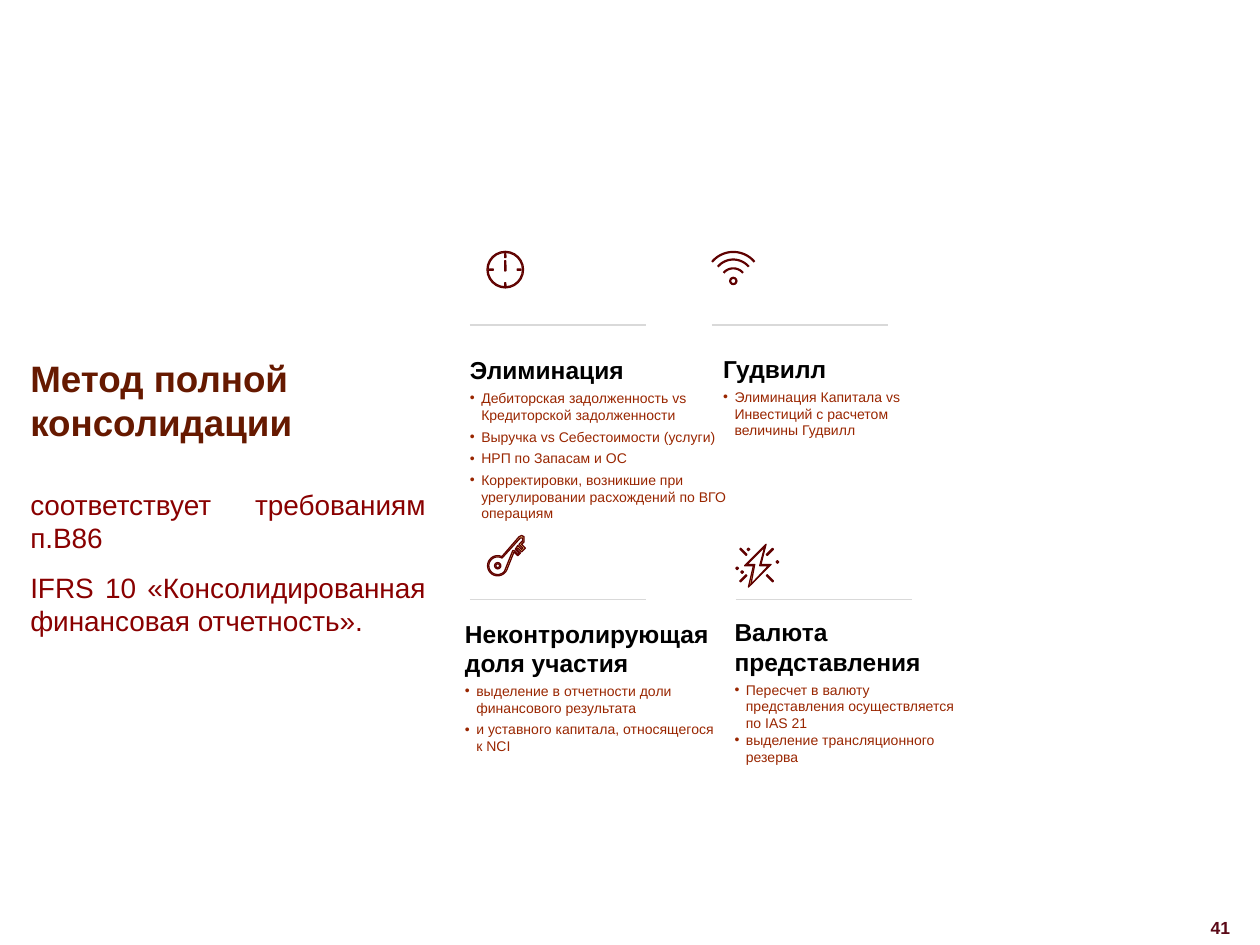
import math
from typing import NamedTuple

import pptx
import pptx.dml.color
import pptx.enum.shapes
import pptx.enum.text
import pptx.oxml.ns
import pptx.util
from lxml import etree

Inches = pptx.util.Inches
Pt = pptx.util.Pt
Align = pptx.enum.text.PP_ALIGN
Preset = pptx.enum.shapes.MSO_SHAPE

COLORS = {
    "title": "661900",
    "body": "890000",
    "heading": "000000",
    "bullet": "992600",
    "number": "5B0917",
    "rule": "D9D9D9",
    "icon": "5F0000",
    "gold": "F9E383",
    "cream": "FBEFC1",
}
FORMATS = {
    "title": {"size": Pt(21), "bold": True},
    "body": {"size": Pt(16), "bold": False},
    "heading": {"size": Pt(14), "bold": True},
    "bullet": {"size": Pt(8), "bold": False},
    "number": {"size": Pt(10), "bold": True},
}
INSETS = {
    "margin_left": 0,
    "margin_top": Inches(0.04),
    "margin_right": Inches(0.07),
    "margin_bottom": Inches(0.04),
}


class Topic(NamedTuple):
    left: float
    top: float
    width: float
    height: float
    rule_left: float
    rule_top: float
    heading: str
    bullets: list[str]
    bullet_gap: float = 2.8


TOPICS = [
    Topic(3.69, 4.87, 2.11, 1.17, 3.73, 4.76, "Неконтролирующая доля участия", [
        "выделение в отчетности доли финансового результата",
        "и уставного капитала, относящегося к NCI",
    ]),
    Topic(3.73, 2.78, 2.13, 1.42, 3.73, 2.58, "Элиминация", [
        "Дебиторская задолженность vs Кредиторской задолженности",
        "Выручка vs Себестоимости (услуги)",
        "НРП по Запасам и ОС",
        "Корректировки, возникшие при урегулировании расхождений по ВГО операциям",
    ]),
    Topic(5.74, 2.77, 1.86, 0.76, 5.65, 2.58, "Гудвилл", [
        "Элиминация Капитала vs Инвестиций с расчетом величины Гудвилл",
    ]),
    Topic(5.83, 4.86, 1.86, 1.4, 5.84, 4.76, "Валюта представления", [
        "Пересчет в валюту представления осуществляется по IAS 21",
        "выделение трансляционного резерва",
    ], 0),
]


def rgb(name: str):
    return pptx.dml.color.RGBColor.from_string(COLORS[name])


def add_text_box(slide, left: float, top: float, width: float, height: float, **frame_format):
    box = slide.shapes.add_textbox(Inches(left), Inches(top), Inches(width), Inches(height))
    for name, value in {"word_wrap": True, **frame_format}.items():
        setattr(box.text_frame, name, value)
    return box.text_frame


def write_paragraph(frame, text: str, style: str, bulleted: bool = False, **paragraph_format):
    """Fill the first paragraph of an empty frame, or append one."""
    paragraph = frame.add_paragraph() if frame.text else frame.paragraphs[0]
    for name, value in paragraph_format.items():
        setattr(paragraph, name, value)
    if bulleted:
        properties = paragraph._p.get_or_add_pPr()
        properties.set("marL", str(Inches(0.09)))
        properties.set("indent", str(-Inches(0.09)))
        etree.SubElement(properties, pptx.oxml.ns.qn("a:buFont"), typeface="Arial")
        etree.SubElement(properties, pptx.oxml.ns.qn("a:buChar"), char="•")
    run = paragraph.add_run()
    run.text = text
    for name, value in {"name": "Arial", **FORMATS[style]}.items():
        setattr(run.font, name, value)
    run.font.color.rgb = rgb(style)


def add_rule(slide, left: float, top: float) -> None:
    rule = slide.shapes.add_connector(
        pptx.enum.shapes.MSO_CONNECTOR.STRAIGHT,
        Inches(left), Inches(top), Inches(left + 1.4), Inches(top))
    rule.line.color.rgb = rgb("rule")
    rule.line.width = Pt(0.75)
    etree.SubElement(rule._element.spPr, pptx.oxml.ns.qn("a:effectLst"))


def add_topic(slide, topic: Topic) -> None:
    add_rule(slide, topic.rule_left, topic.rule_top)
    frame = add_text_box(slide, topic.left, topic.top, topic.width, topic.height, **INSETS)
    write_paragraph(frame, topic.heading, "heading", space_after=Pt(2.8))
    for bullet in topic.bullets:
        write_paragraph(frame, bullet, "bullet", True, space_after=Pt(topic.bullet_gap))


def paint(shape, fill: str | None, width: float = 0.75):
    shape.shadow.inherit = False
    if fill:
        shape.fill.solid()
        shape.fill.fore_color.rgb = rgb(fill)
    else:
        shape.fill.background()
    shape.line.color.rgb = rgb("icon")
    shape.line.width = Pt(width)
    return shape


def add_preset(group, preset, x: float, y: float, width: float, height: float, fill: str | None,
               line_width: float = 0.75):
    """Add a preset shape centred on x, y."""
    return paint(group.shapes.add_shape(
        preset, Inches(x - width / 2), Inches(y - height / 2),
        Inches(width), Inches(height)), fill, line_width)


def add_outline(group, contours: list, fill: str | None, close: bool = True, width: float = 0.75):
    scaled = [[(Inches(x), Inches(y)) for x, y in contour] for contour in contours]
    builder = group.shapes.build_freeform(*scaled[0][0])
    builder.add_line_segments(scaled[0][1:], close=close)
    for contour in scaled[1:]:
        builder.move_to(*contour[0])
        builder.add_line_segments(contour[1:], close=close)
    paint(builder.convert_to_shape(), fill, width)


def arc(x: float, y: float, radius: float, start: int, end: int) -> list:
    """Points along a circle, with angles in degrees clockwise from the right."""
    angles = [math.radians(start + (end - start) * step / 24) for step in range(25)]
    return [(x + radius * math.cos(angle), y + radius * math.sin(angle)) for angle in angles]


def add_clock(slide) -> None:
    group = slide.shapes.add_group_shape()
    ring = add_preset(group, Preset.DONUT, 4.01, 2.14, 0.29, 0.29, "gold")
    ring.adjustments[0] = 0.03
    marks = [(4.01, 2.03, 0.01, 0.03), (4.01, 2.26, 0.01, 0.03), (4.12, 2.14, 0.03, 0.01),
             (3.9, 2.14, 0.03, 0.01), (4.01, 2.11, 0.01, 0.08)]
    for mark in marks:
        add_preset(group, Preset.ROUNDED_RECTANGLE, *mark, "cream")


def add_signal(slide) -> None:
    group = slide.shapes.add_group_shape()
    add_preset(group, Preset.OVAL, 5.82, 2.23, 0.05, 0.05, None, 1.25)
    for radius, top in ((0.1, 2.13), (0.16, 2.06), (0.22, 2)):
        add_outline(group, [arc(5.82, top + radius, radius, 220, 320)], None, False, 1.25)


def add_key(slide) -> None:
    group = slide.shapes.add_group_shape()
    outer = [(4.08, 4.38), (4.11, 4.41), (4.13, 4.39), (4.1, 4.36), (4.11, 4.35), (4.14, 4.38),
             (4.17, 4.35), (4.14, 4.32), (4.16, 4.3), (4.16, 4.26), (4.14, 4.25), (4.12, 4.26)]
    inner = [(4.07, 4.37), (4.08, 4.37), (4.11, 4.4), (4.12, 4.39), (4.09, 4.36), (4.11, 4.33),
             (4.14, 4.36), (4.15, 4.35), (4.12, 4.32), (4.15, 4.29), (4.15, 4.27), (4.13, 4.27)]
    add_outline(group, [outer + arc(3.95, 4.49, 0.08, -65, -335),
                        inner + arc(3.95, 4.49, 0.07, -60, -320)], "gold")
    hole = add_preset(group, Preset.DONUT, 3.95, 4.49, 0.05, 0.05, "cream")
    hole.adjustments[0] = 0.2


def add_lightning(slide) -> None:
    group = slide.shapes.add_group_shape()
    add_outline(group, [
        [(6.12, 4.48), (6.04, 4.48), (6.08, 4.32), (5.91, 4.49), (5.98, 4.49), (5.94, 4.66)],
        [(5.96, 4.64), (5.99, 4.48), (5.93, 4.48), (6.07, 4.34), (6.03, 4.49), (6.1, 4.49)],
    ], "gold")
    for x, y, angle in ((6.11, 4.59, 45), (5.9, 4.38, 45), (6.11, 4.38, -45), (5.9, 4.59, -45)):
        ray = add_preset(group, Preset.ROUNDED_RECTANGLE, x, y, 0.07, 0.01, "cream")
        ray.rotation = angle
    for x, y, fill in ((5.89, 4.54, "cream"), (5.85, 4.51, "gold"),
                       (6.17, 4.46, "gold"), (5.94, 4.36, "cream")):
        add_preset(group, Preset.DIAMOND, x, y, 0.02, 0.02, fill)


def main() -> None:
    presentation = pptx.Presentation()
    presentation.slide_width, presentation.slide_height = Inches(10), Inches(7.5)
    slide = presentation.slides.add_slide(presentation.slide_layouts[6])

    for add_icon in (add_key, add_clock, add_signal, add_lightning):
        add_icon(slide)
    frame = add_text_box(slide, 9.02, 7.22, 0.84, 0.28,
                         vertical_anchor=pptx.enum.text.MSO_ANCHOR.MIDDLE)
    write_paragraph(frame, "41", "number", alignment=Align.RIGHT)

    frame = add_text_box(slide, 0.24, 2.78, 3.21, 2.86, **INSETS)
    write_paragraph(frame, "Метод полной консолидации", "title")
    write_paragraph(frame, "соответствует требованиям п.B86", "body",
                    alignment=Align.JUSTIFY, space_before=Pt(25), space_after=Pt(9))
    write_paragraph(frame, "IFRS 10 «Консолидированная финансовая отчетность».", "body",
                    alignment=Align.JUSTIFY, space_after=Pt(9))
    for topic in TOPICS:
        add_topic(slide, topic)
    presentation.save("out.pptx")


if __name__ == "__main__":
    main()
